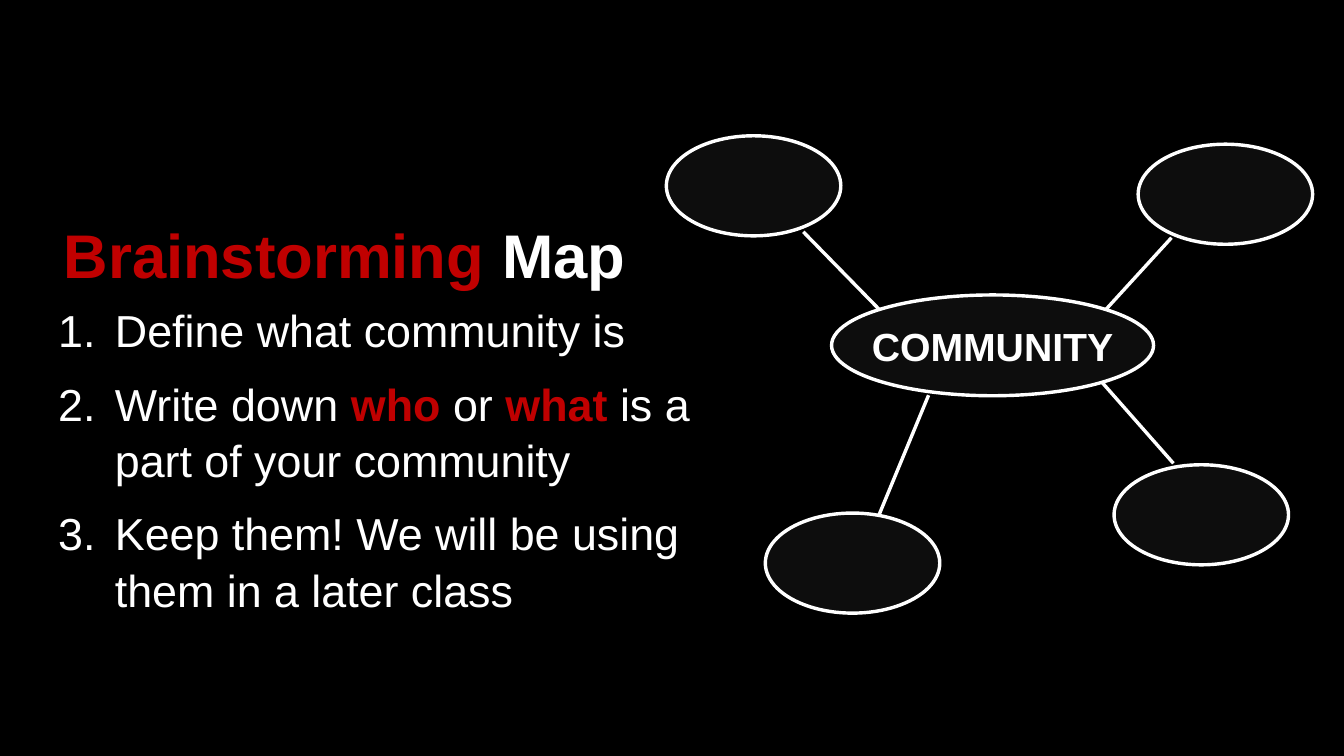
from lxml.etree import SubElement
from pptx import Presentation
from pptx.dml.color import RGBColor
from pptx.enum.shapes import MSO_CONNECTOR, MSO_SHAPE
from pptx.enum.text import MSO_ANCHOR, MSO_AUTO_SIZE, PP_ALIGN
from pptx.oxml.ns import qn
from pptx.util import Pt

WHITE, RED, BLACK = "FFFFFF", "C00000", "000000"


def color(code):
    return RGBColor.from_string(code)


class Board:
    """Style and current slide; all lengths in points."""
    face = "Arial"
    width = 2.43

    def __init__(self, slide):
        self.slide = slide
        fill = slide.background.fill
        fill.solid()
        fill.fore_color.rgb = color(BLACK)

    def font(self, para, size, bold=False):
        font = para.font
        font.name, font.size, font.bold = self.face, Pt(size), bold
        font.color.rgb = color(WHITE)

    def runs(self, para, parts):
        """Add runs; a (text, True) pair is a red bold one."""
        for text, key in parts:
            run = para.add_run()
            run.text = text
            if key:
                run.font.bold = True
                run.font.color.rgb = color(RED)

    def title(self, left, top, width, height, parts):
        shape = self.slide.shapes.title
        shape.left, shape.top = Pt(left), Pt(top)
        shape.width, shape.height = Pt(width), Pt(height)
        frame = shape.text_frame
        frame.word_wrap = True
        frame.auto_size = MSO_AUTO_SIZE.NONE
        frame.vertical_anchor = MSO_ANCHOR.MIDDLE
        para = frame.paragraphs[0]
        para.alignment = PP_ALIGN.LEFT
        para.line_spacing = 0.9
        self.font(para, 44, True)
        self.runs(para, parts)

    def steps(self, left, top, width, height, items):
        box = self.slide.shapes.add_textbox(Pt(left), Pt(top), Pt(width), Pt(height))
        frame = box.text_frame
        frame.word_wrap = True
        for num, parts in enumerate(items):
            para = frame.add_paragraph() if num else frame.paragraphs[0]
            para.space_after = Pt(12)
            para.line_spacing = 1.05
            self.font(para, 32)
            self.runs(para, parts)
            # Automatic number with a hanging indent
            props = para._p.get_or_add_pPr()
            props.set("marL", str(Pt(40.5)))
            props.set("indent", str(-Pt(40.5)))
            mark = props.makeelement(qn("a:buAutoNum"), {"type": "arabicPeriod"})
            props.find(qn("a:defRPr")).addprevious(mark)

    def oval(self, left, top, width, height, text=""):
        shape = self.slide.shapes.add_shape(
            MSO_SHAPE.OVAL, Pt(left), Pt(top), Pt(width), Pt(height))
        shape.shadow.inherit = False
        shape.fill.solid()
        shape.fill.fore_color.rgb = color(WHITE)
        tone = shape._element.spPr.find(qn("a:solidFill"))[0]
        SubElement(tone, qn("a:alpha"), val="5000")
        shape.line.color.rgb = color(WHITE)
        shape.line.width = Pt(self.width)
        if text:
            frame = shape.text_frame
            frame.word_wrap = False
            frame.vertical_anchor = MSO_ANCHOR.MIDDLE
            para = frame.paragraphs[0]
            para.alignment = PP_ALIGN.CENTER
            self.font(para, 28, True)
            self.runs(para, [(text, False)])

    def link(self, *ends):
        line = self.slide.shapes.add_connector(
            MSO_CONNECTOR.STRAIGHT, *[Pt(end) for end in ends])
        line.line.color.rgb = color(WHITE)
        line.line.width = Pt(self.width)
        SubElement(line._element.spPr, qn("a:effectLst"))


def main():
    deck = Presentation()
    deck.slide_width, deck.slide_height = Pt(960), Pt(540)
    board = Board(deck.slides.add_slide(deck.slide_layouts[5]))

    # Title and steps
    board.title(38.2, 137.5, 466, 95, [("Brainstorming", True), (" Map", False)])
    board.steps(34.5, 211, 466, 276.5, [
        [("Define what community is", False)],
        [("Write down ", False), ("who", True), (" or ", False),
         ("what", True), (" is a part of your community", False)],
        [("Keep them! We will be using them in a later class", False)],
    ])

    # Map: hub, then each empty bubble with its link
    board.oval(594, 210.7, 230, 72, "COMMUNITY")
    bubbles = [
        ((476, 97), (628, 221, 573.8, 165.6)),
        ((813, 103), (790, 221, 836.8, 169.8)),
        ((795.8, 332), (787.5, 273.5, 838.2, 331)),
        ((546.7, 366.5), (663.3, 282.3, 627.8, 368)),
    ]
    for spot, ends in bubbles:
        board.link(*ends)
        board.oval(*spot, 124.6, 71.5)

    deck.save("out.pptx")


if __name__ == "__main__":
    main()
